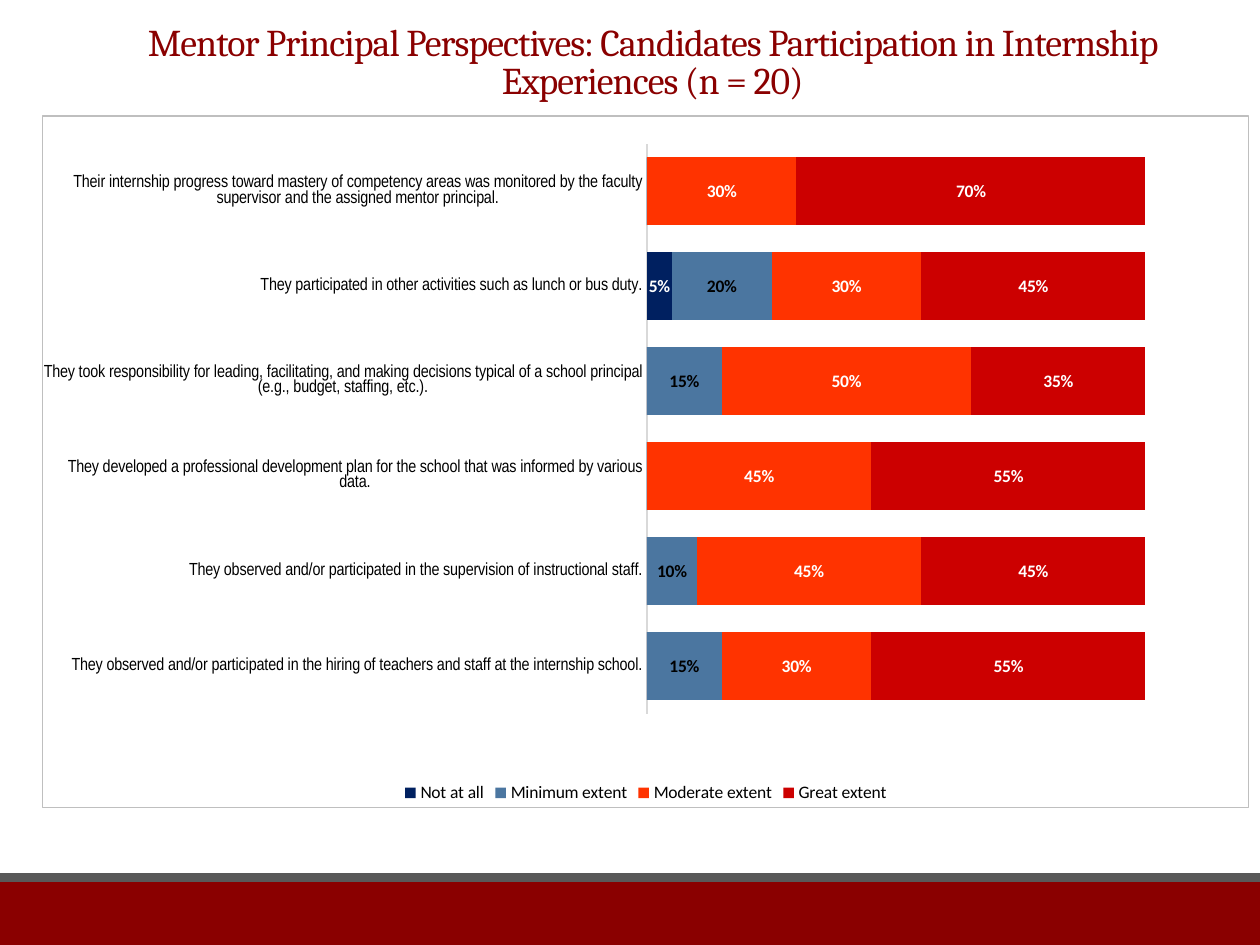
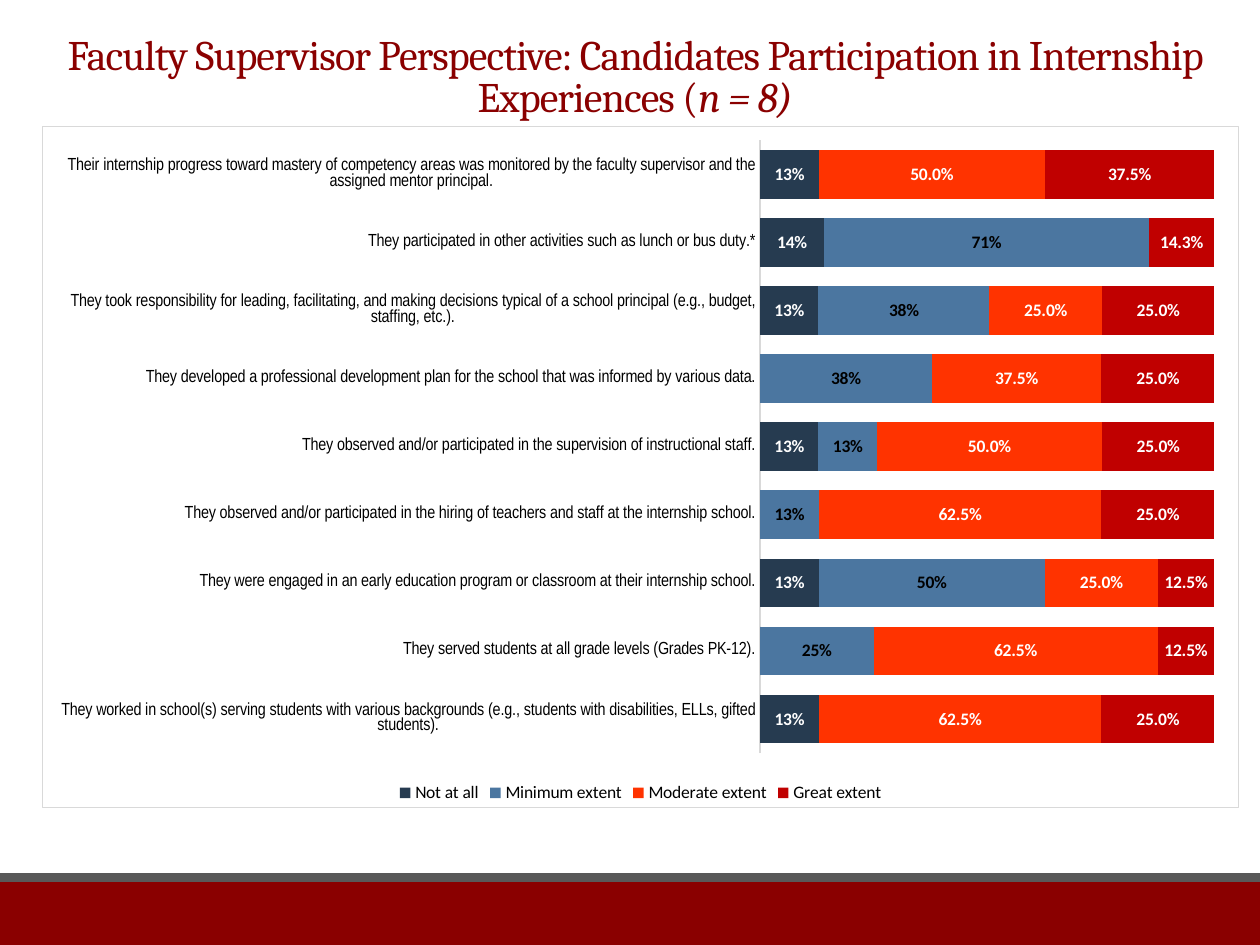
from lxml import etree
from pptx import Presentation
from pptx import util as u
from pptx.chart.data import CategoryChartData
from pptx.dml.color import RGBColor
from pptx.enum import chart as ch, shapes, text
from pptx.oxml import parse_xml
from pptx.oxml.ns import qn, nsdecls

RED, GREY, WHITE, BLACK = "8A0000", "595959", "FFFFFF", "000000"
STEEL, ORANGE = "4B76A0", "FF3300"
EXTENTS = ["Not at all", "Minimum extent", "Moderate extent", "Great extent"]
LABEL_COLORS = [WHITE, BLACK, WHITE, WHITE]

LUNCH_DUTY = "They participated in other activities such as lunch or bus duty."
ACTIVITIES = [
    "They observed and/or participated in the hiring of teachers and staff at the internship school.",
    "They observed and/or participated in the supervision of instructional staff.",
    "They developed a professional development plan for the school that was informed by various data.",
    "They took responsibility for leading, facilitating, and making decisions typical of a school "
    "principal (e.g., budget, staffing, etc.).",
    LUNCH_DUTY,
    "Their internship progress toward mastery of competency areas was monitored by the faculty "
    "supervisor and the assigned mentor principal.",
]
FACULTY_ACTIVITIES = [
    "They worked in school(s) serving students with various backgrounds (e.g., students with "
    "disabilities, ELLs, gifted students).",
    "They served students at all grade levels (Grades PK-12).",
    "They were engaged in an early education program or classroom at their internship school.",
] + [a + "*" if a == LUNCH_DUTY else a for a in ACTIVITIES]

MENTOR_VALUES = [
    [0, 0, 0, 0, 0.05, 0],
    [0.15, 0.1, 0, 0.15, 0.2, 0],
    [0.3, 0.45, 0.45, 0.5, 0.3, 0.3],
    [0.55, 0.45, 0.55, 0.35, 0.45, 0.7],
]
FACULTY_VALUES = [
    [0.13, 0, 0.13, 0, 0.13, 0, 0.13, 0.14, 0.13],
    [0, 0.25, 0.5, 0.13, 0.13, 0.38, 0.38, 0.71, 0],
    [0.625, 0.625, 0.25, 0.625, 0.5, 0.375, 0.25, 0, 0.5],
    [0.25, 0.125, 0.125, 0.25, 0.25, 0.25, 0.25, 0.143, 0.375],
]


def rgb(value):
    return RGBColor.from_string(value)


def box(left, top, width, height):
    return [u.Pt(v) for v in (left, top, width, height)]


def style_font(font, name, size, color, bold=False):
    font.name, font.size, font.bold = name, u.Pt(size), bold
    font.color.rgb = rgb(color)


def add_band(s, top, height, color):
    sp = s.shapes.add_shape(shapes.MSO_SHAPE.RECTANGLE, *box(0, top, 720, height))
    sp.shadow.inherit = False
    sp.fill.solid()
    sp.fill.fore_color.rgb = rgb(color)
    sp.line.fill.background()


def add_title(s, area, size, words, italic_words=""):
    tf = s.shapes.add_textbox(*box(*area)).text_frame
    tf.word_wrap = True
    tf.vertical_anchor = text.MSO_ANCHOR.BOTTOM
    p = tf.paragraphs[0]
    p.alignment = text.PP_ALIGN.CENTER
    p.line_spacing = 0.85
    style_font(p.font, "Cambria", size, RED)
    for part, italic in ((words, False), (italic_words, True)):
        if part:
            r = p.add_run()
            r.text = part
            r.font.italic = italic
            r._r.get_or_add_rPr().set("spc", "-50")


def frame_chart(chart, border):
    chart._chartSpace.find(qn("c:chart")).addnext(parse_xml(
        f'<c:spPr {nsdecls("c", "a")}><a:solidFill><a:srgbClr val="{WHITE}"/></a:solidFill>'
        f'<a:ln w="9525"><a:solidFill><a:srgbClr val="{border}"/></a:solidFill></a:ln></c:spPr>'))


def place_plot(chart, area):
    plot_area = chart._chartSpace.find(".//" + qn("c:plotArea"))
    for old in plot_area.findall(qn("c:layout")):
        plot_area.remove(old)
    layout = parse_xml(f'<c:layout {nsdecls("c")}><c:manualLayout/></c:layout>')
    settings = [("layoutTarget", "inner"), ("xMode", "edge"), ("yMode", "edge")]
    for tag, val in settings + list(zip("xywh", area)):
        etree.SubElement(layout[0], qn("c:" + tag)).set("val", str(val))
    plot_area.insert(0, layout)


def label_series(series, values, color, number_format):
    labels = series.data_labels
    labels.show_value = True
    labels.number_format = number_format
    labels.number_format_is_linked = False
    labels.position = ch.XL_LABEL_POSITION.CENTER
    style_font(labels.font, "Calibri", 10, color, True)
    empty = [i for i, v in enumerate(values) if v == 0]
    for place, i in enumerate(empty):
        labels._element.insert(place, parse_xml(
            f'<c:dLbl {nsdecls("c")}><c:idx val="{i}"/><c:delete val="1"/></c:dLbl>'))


def add_extent_chart(s, kind, area, plot, cats, values, colors, formats, border, maximum):
    data = CategoryChartData(number_format="0%")
    data.categories = cats
    for name, vals in zip(EXTENTS, values):
        data.add_series(name, vals)
    chart = s.shapes.add_chart(kind, *box(*area), data).chart
    style_font(chart.font, "Calibri", 10, BLACK)
    chart.has_title = False
    chart.has_legend = True
    chart.legend.position = ch.XL_LEGEND_POSITION.BOTTOM
    chart.legend.include_in_layout = False
    style_font(chart.legend.font, "Calibri", 10, BLACK)

    axis = chart.category_axis
    axis.major_tick_mark = axis.minor_tick_mark = ch.XL_TICK_MARK.NONE
    axis.has_major_gridlines = False
    axis.format.line.color.rgb = rgb("D9D9D9")
    axis.format.line.width = u.Pt(0.75)
    style_font(axis.tick_labels.font, "Arial Narrow", 10, BLACK)
    scale = chart.value_axis
    scale.minimum_scale, scale.maximum_scale = 0, maximum
    scale.has_major_gridlines = False
    scale.visible = False

    bars = chart.plots[0]
    bars.gap_width, bars.overlap = 40, 100
    bars.vary_by_categories = False
    for series, vals, color, label_color, fmt in zip(
            bars.series, values, colors, LABEL_COLORS, formats):
        series.format.fill.solid()
        series.format.fill.fore_color.rgb = rgb(color)
        label_series(series, vals, label_color, fmt)
    frame_chart(chart, border)
    place_plot(chart, plot)


def add_slide(prs):
    s = prs.slides.add_slide(prs.slide_layouts[6])
    add_band(s, 504, 36, RED)
    add_band(s, 499, 5, GREY)
    return s


def main():
    prs = Presentation()
    prs.slide_width, prs.slide_height = u.Pt(720), u.Pt(540)

    s = add_slide(prs)
    add_title(s, (28, 12, 690, 50), 21.6,
              "Mentor Principal Perspectives: Candidates Participation in Internship "
              "Experiences (n = 20)")
    add_extent_chart(s, ch.XL_CHART_TYPE.BAR_STACKED, (24, 66, 690, 396),
                     (0.501, 0.04, 0.496, 0.824), ACTIVITIES, MENTOR_VALUES,
                     ["002060", STEEL, ORANGE, "CC0000"], ["0%"] * 4, "BFBFBF", 1.2)

    s = add_slide(prs)
    add_title(s, (12, 12, 702, 61), 24,
              "Faculty Supervisor Perspective: Candidates Participation in Internship "
              "Experiences (", "n = 8)")
    add_extent_chart(s, ch.XL_CHART_TYPE.BAR_STACKED_100, (24, 72, 684, 390),
                     (0.6, 0.02, 0.38, 0.9), FACULTY_ACTIVITIES, FACULTY_VALUES,
                     ["263B50", STEEL, ORANGE, "C00000"], ["0%", "0%", "0.0%", "0.0%"],
                     "D9D9D9", 1)

    prs.save("out.pptx")


if __name__ == "__main__":
    main()
